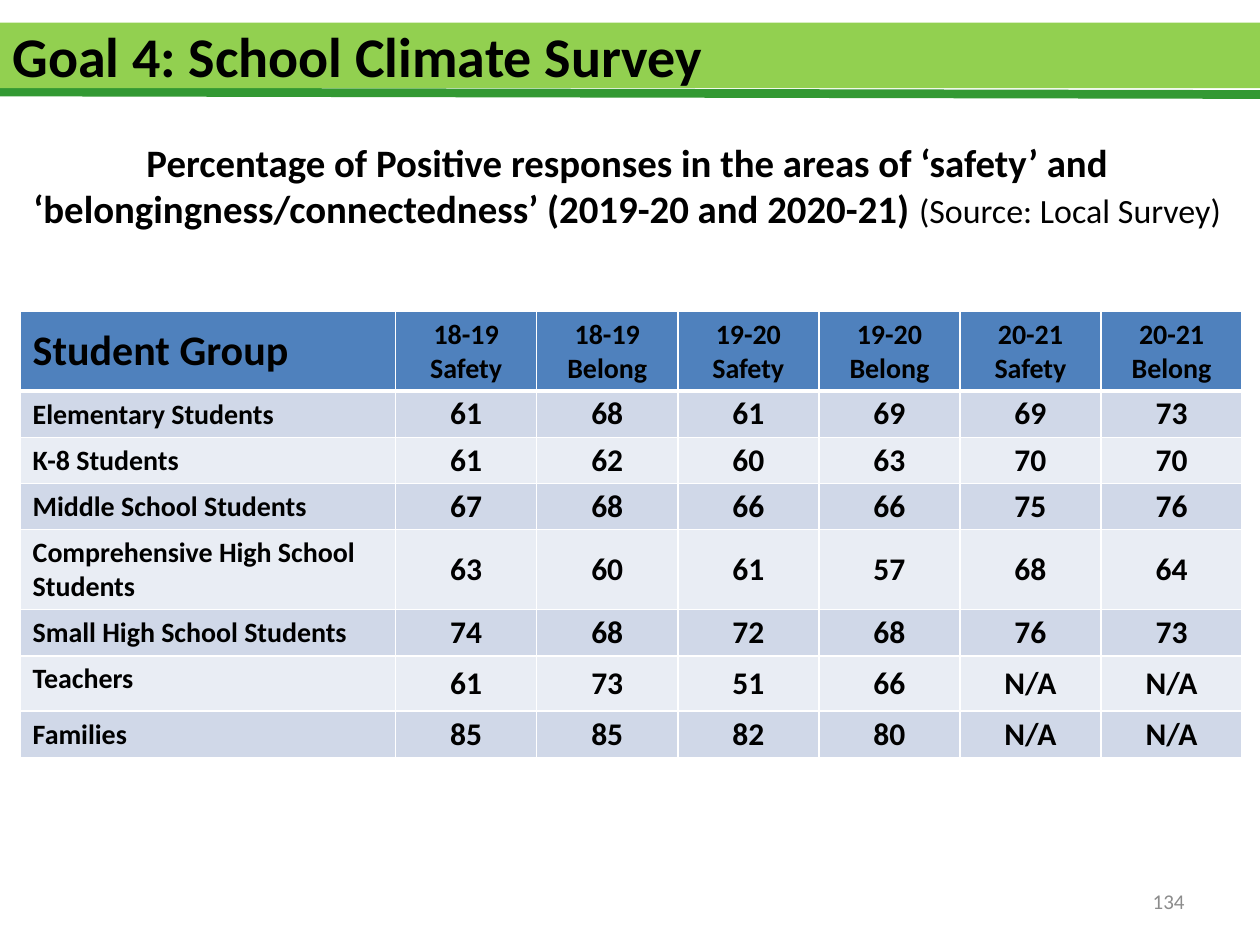
from dataclasses import dataclass
from typing import Optional

from lxml.etree import SubElement
from pptx import Presentation
from pptx.dml.color import RGBColor as Rgb
from pptx.enum.shapes import MSO_CONNECTOR as Connector
from pptx.enum.text import MSO_ANCHOR as Anchor, MSO_AUTO_SIZE as AutoSize, PP_ALIGN as Align
from pptx.oxml import parse_xml
from pptx.oxml.ns import nsdecls, qn
from pptx.util import Inches, Pt


@dataclass(frozen=True)
class Theme:
    font: str = "Calibri"
    ink: str = "000000"
    muted: str = "8C8C8C"
    banner: str = "92D050"
    rule: str = "339933"
    header: str = "4F81BD"
    bands: tuple = ("D0D8E8", "E9EDF4")
    border: str = "FFFFFF"
    title_size: float = 32
    subtitle_size: float = 22.2
    source_size: float = 19.4
    corner_size: float = 24
    label_size: float = 16
    value_size: float = 18
    number_size: float = 12


@dataclass(frozen=True)
class Words:
    text: str
    size: float
    bold: bool = True
    color: str = Theme.ink


@dataclass(frozen=True)
class SurveyRow:
    group: str
    values: tuple
    height: float = 0.35


THEME = Theme()
COLUMNS = [f"{year} {area}" for year in ("18-19", "19-20", "20-21")
           for area in ("Safety", "Belong")]
SURVEY = [
    SurveyRow("Elementary Students", (61, 68, 61, 69, 69, 73)),
    SurveyRow("K-8 Students", (61, 62, 60, 63, 70, 70)),
    SurveyRow("Middle School Students", (67, 68, 66, 66, 75, 76)),
    SurveyRow("Comprehensive High School Students", (63, 60, 61, 57, 68, 64)),
    SurveyRow("Small High School Students", (74, 68, 72, 68, 76, 73)),
    SurveyRow("Teachers", (61, 73, 51, 66, "N/A", "N/A"), 0.44),
    SurveyRow("Families", (85, 85, 82, 80, "N/A", "N/A")),
]


def write(frame, words: list[Words], align: Align) -> None:
    """Fill the first paragraph of a text frame, run by run."""
    para = frame.paragraphs[0]
    para.alignment = align
    for part in words:
        span = para.add_run()
        span.text = part.text
        span.font.name = THEME.font
        span.font.size = Pt(part.size)
        span.font.bold = part.bold
        span.font.color.rgb = Rgb.from_string(part.color)


def place(shape, left: float, top: float, width: float, height: float) -> None:
    shape.left, shape.top = Inches(left), Inches(top)
    shape.width, shape.height = Inches(width), Inches(height)


def add_title(page, text: str) -> None:
    title = page.shapes.title
    place(title, 0, 0.18, 10, 0.52)
    title.fill.solid()
    title.fill.fore_color.rgb = Rgb.from_string(THEME.banner)
    title.text_frame.auto_size = AutoSize.NONE
    title.text_frame.vertical_anchor = Anchor.MIDDLE
    write(title.text_frame, [Words(text, THEME.title_size)], Align.LEFT)


def add_rule(page) -> None:
    rule = page.shapes.add_connector(
        Connector.STRAIGHT, Inches(0), Inches(0.73), Inches(10), Inches(0.75))
    rule.line.color.rgb = Rgb.from_string(THEME.rule)
    rule.line.width = Pt(5)
    SubElement(rule._element.spPr, qn("a:effectLst"))
    # Send the rule behind the title banner
    page.shapes._spTree.insert(2, rule._element)


def add_text(page, box_at: tuple, words: list[Words], align: Align, anchor: Anchor) -> None:
    box = page.shapes.add_textbox(*(Inches(length) for length in box_at))
    box.text_frame.word_wrap = True
    box.text_frame.vertical_anchor = anchor
    write(box.text_frame, words, align)


def set_borders(cell, top: float, bottom: float) -> None:
    """Draw the four cell edges; they must come before the cell fill."""
    edges = {"lnL": 1, "lnR": 1, "lnT": top, "lnB": bottom}
    for index, (edge, points) in enumerate(edges.items()):
        cell._tc.get_or_add_tcPr().insert(index, parse_xml(
            f'<a:{edge} {nsdecls("a")} w="{Pt(points)}"><a:solidFill>'
            f'<a:srgbClr val="{THEME.border}"/></a:solidFill></a:{edge}>'))


def fill_cell(cell, words: Words, fill: str, align: Align, anchor: Anchor,
              margins: Optional[tuple] = None) -> None:
    cell.fill.solid()
    cell.fill.fore_color.rgb = Rgb.from_string(fill)
    cell.vertical_anchor = anchor
    if margins:
        cell.margin_left = cell.margin_right = Inches(margins[0])
        cell.margin_top = cell.margin_bottom = Inches(margins[1])
    write(cell.text_frame, [words], align)


def add_survey_table(page) -> None:
    table = page.shapes.add_table(
        len(SURVEY) + 1, len(COLUMNS) + 1,
        Inches(0.16), Inches(2.47), Inches(9.69), Inches(3.54)).table
    for index, column in enumerate(table.columns):
        column.width = Inches(1.12 if index else 2.98)

    # Header row
    table.rows[0].height = Inches(0.41)
    fill_cell(table.cell(0, 0), Words("Student Group", THEME.corner_size),
              THEME.header, Align.LEFT, Anchor.MIDDLE)
    for index, heading in enumerate(COLUMNS, 1):
        fill_cell(table.cell(0, index), Words(heading, THEME.label_size),
                  THEME.header, Align.CENTER, Anchor.TOP)

    # One banded row per group
    for number, row in enumerate(SURVEY, 1):
        band = THEME.bands[(number - 1) % 2]
        table.rows[number].height = Inches(row.height)
        fill_cell(table.cell(number, 0), Words(row.group, THEME.label_size),
                  band, Align.LEFT, Anchor.TOP)
        for index, value in enumerate(row.values, 1):
            fill_cell(table.cell(number, index), Words(str(value), THEME.value_size),
                      band, Align.CENTER, Anchor.MIDDLE, (0.02, 0.01))

    # Thick line under the header, thin lines elsewhere
    for number, row in enumerate(table.rows):
        for cell in row.cells:
            set_borders(cell, top=3 if number == 1 else 1, bottom=3 if number == 0 else 1)


def main() -> None:
    deck = Presentation()
    deck.slide_width, deck.slide_height = Inches(10), Inches(7.5)
    page = deck.slides.add_slide(deck.slide_layouts[5])

    add_title(page, "Goal 4: School Climate Survey")
    add_rule(page)
    add_text(page, (7.17, 6.95, 2.33, 0.4),
             [Words("134", THEME.number_size, False, THEME.muted)],
             Align.RIGHT, Anchor.MIDDLE)
    add_survey_table(page)
    add_text(page, (-0.02, 1.05, 10, 1), [
        Words("Percentage of Positive responses in the areas of ‘safety’ and "
              "‘belongingness/connectedness’ (2019-20 and 2020-21) ", THEME.subtitle_size),
        Words("(Source: Local Survey)", THEME.source_size, False),
    ], Align.CENTER, Anchor.TOP)

    deck.save("out.pptx")


if __name__ == "__main__":
    main()
